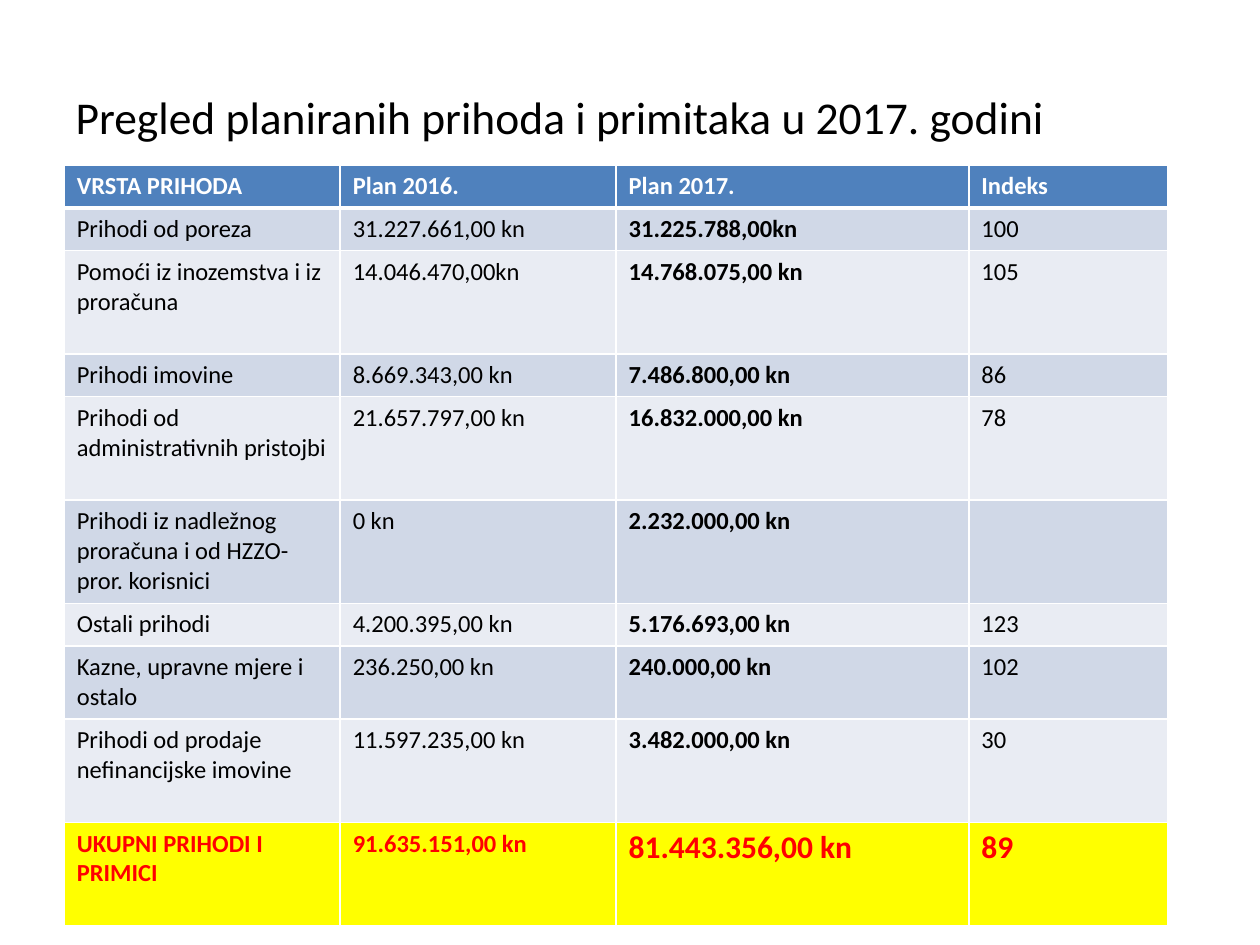
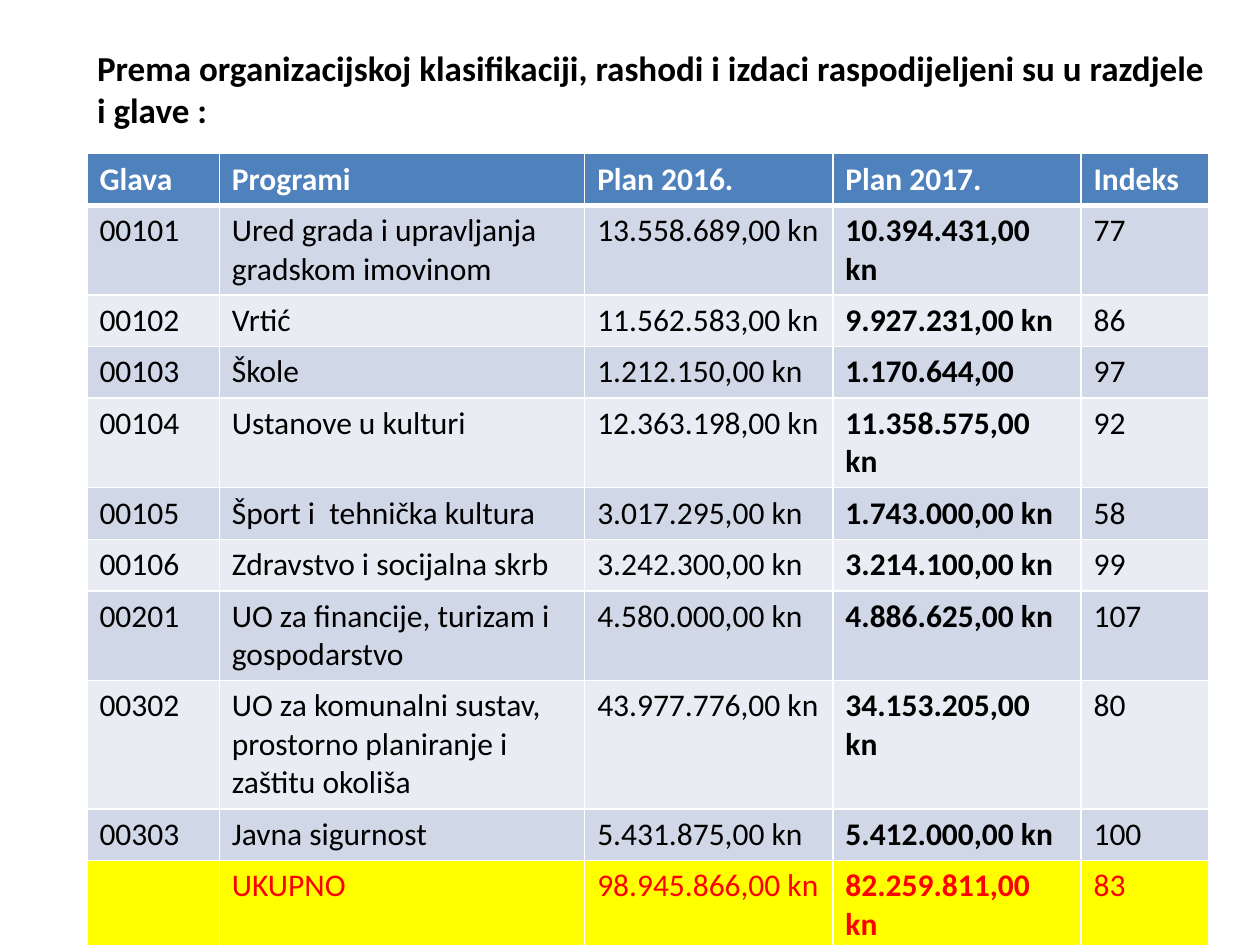
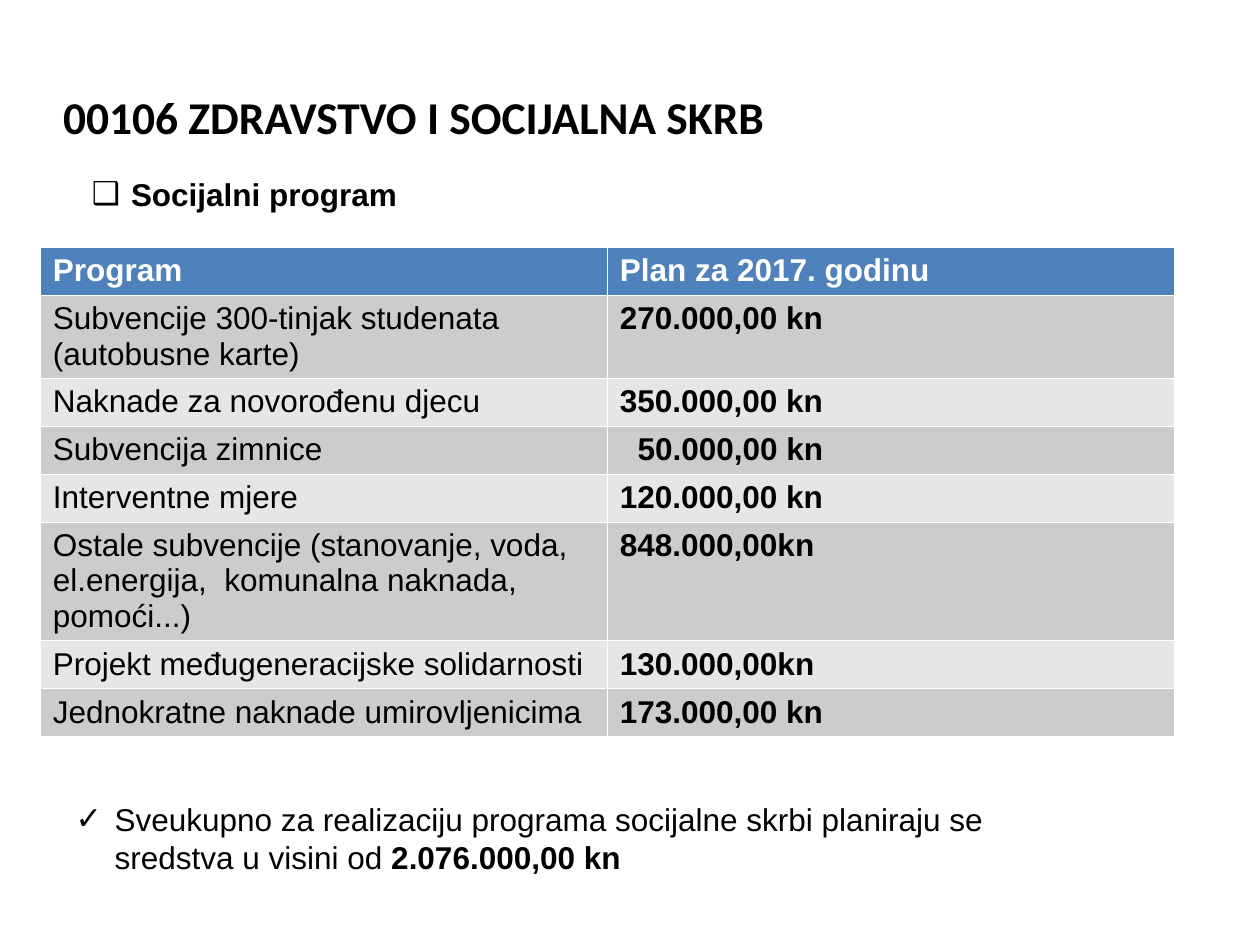
import pptx
import pptx.util
import pptx.dml.color
import pptx.enum.text
import pptx.oxml.ns
from lxml import etree

Inches = pptx.util.Inches

# Shared look
BLACK, WHITE, RED, YELLOW = "000000", "FFFFFF", "FF0000", "FFFF00"
HEADER_BLUE = "4F81BD"
BLUE_BANDS = ("D0D8E7", "E9ECF3")
GREY_BANDS = ("CCCCCC", "E6E6E6")
THIN, THICK, HAIRLINE = 0.96, 3, 0.06

# Content: one dict per slide; the plan for 2017 is the bold column
REVENUE = {
    "title": "Pregled planiranih prihoda i primitaka u 2017. godini",
    "title_box": (0.5, 0.3, 9, 1.25),
    "title_size": 26,
    "table_at": (0.51, 1.31),
    "columns": (2.19, 2.19, 2.8, 1.58),
    "heights": (0.34, 0.34, 0.82, 0.34, 0.82, 0.82, 0.34, 0.58, 0.82, 0.82),
    "size": 14,
    "bold_column": 2,
    "total_bold": True,
    "total_sizes": (14, 14, 18, 18),
    "rows": [
        ("VRSTA PRIHODA", "Plan 2016.", "Plan 2017.", "Indeks"),
        ("Prihodi od poreza", "31.227.661,00 kn", "31.225.788,00kn", "100"),
        ("Pomoći iz inozemstva i iz proračuna", "14.046.470,00kn", "14.768.075,00 kn", "105"),
        ("Prihodi imovine", "8.669.343,00 kn", "7.486.800,00 kn", "86"),
        ("Prihodi od administrativnih pristojbi", "21.657.797,00 kn", "16.832.000,00 kn", "78"),
        ("Prihodi iz nadležnog proračuna i od HZZO- pror. korisnici", "0 kn", "2.232.000,00 kn", ""),
        ("Ostali prihodi", "4.200.395,00 kn", "5.176.693,00 kn", "123"),
        ("Kazne, upravne mjere i ostalo", "236.250,00 kn", "240.000,00 kn", "102"),
        ("Prihodi od prodaje nefinancijske imovine", "11.597.235,00 kn", "3.482.000,00 kn", "30"),
        ("UKUPNI PRIHODI I PRIMICI", "91.635.151,00 kn", "81.443.356,00 kn", "89"),
    ],
}

EXPENSES = {
    "title": "Prema organizacijskoj klasifikaciji, rashodi i izdaci raspodijeljeni su u razdjele i glave :",
    "title_box": (0.67, 0.08, 9, 1.25),
    "title_size": 20,
    "title_bold": True,
    "table_at": (0.69, 1.22),
    "columns": (1.05, 2.9, 1.97, 1.97, 1.01),
    "heights": (0.41, 0.71, 0.41, 0.41, 0.71, 0.41, 0.41, 0.71, 1.02, 0.41, 0.49),
    "size": 18,
    "bold_column": 3,
    "total_sizes": (18,) * 5,
    "rows": [
        ("Glava", "Programi", "Plan 2016.", "Plan 2017.", "Indeks"),
        ("00101", "Ured grada i upravljanja gradskom imovinom", "13.558.689,00 kn", "10.394.431,00 kn", "77"),
        ("00102", "Vrtić", "11.562.583,00 kn", "9.927.231,00 kn", "86"),
        ("00103", "Škole", "1.212.150,00 kn", "1.170.644,00", "97"),
        ("00104", "Ustanove u kulturi", "12.363.198,00 kn", "11.358.575,00 kn", "92"),
        ("00105", "Šport i  tehnička kultura", "3.017.295,00 kn", "1.743.000,00 kn", "58"),
        ("00106", "Zdravstvo i socijalna skrb", "3.242.300,00 kn", "3.214.100,00 kn", "99"),
        ("00201", "UO za financije, turizam i gospodarstvo", "4.580.000,00 kn", "4.886.625,00 kn", "107"),
        ("00302", "UO za komunalni sustav, prostorno planiranje i zaštitu okoliša",
         "43.977.776,00 kn", "34.153.205,00 kn", "80"),
        ("00303", "Javna sigurnost", "5.431.875,00 kn", "5.412.000,00 kn", "100"),
        ("", "UKUPNO", "98.945.866,00 kn", "82.259.811,00 kn", "83"),
    ],
}

SOCIAL_CARE = {
    "title": "00106 ZDRAVSTVO I SOCIJALNA SKRB",
    "title_box": (0.5, 0.3, 9, 1.25),
    "title_size": 26,
    "title_bold": True,
    "title_inset": 0,
    "table_at": (0.32, 1.96),
    "columns": (4.5, 4.5),
    "heights": (0.31,) + (0.37,) * 7,
    "size": 18,
    "font": "Arial",
    "bands": GREY_BANDS,
    "border": HAIRLINE,
    "header_border": HAIRLINE,
    "bold_column": 1,
    "indents": {(3, 1): 0.14},
    "rows": [
        ("Program", "Plan za 2017. godinu"),
        ("Subvencije 300-tinjak studenata (autobusne karte)", "270.000,00 kn"),
        ("Naknade za novorođenu djecu", "350.000,00 kn"),
        ("Subvencija zimnice", "50.000,00 kn"),
        ("Interventne mjere", "120.000,00 kn"),
        ("Ostale subvencije (stanovanje, voda, el.energija,  komunalna naknada, pomoći...)", "848.000,00kn"),
        ("Projekt međugeneracijske solidarnosti", "130.000,00kn"),
        ("Jednokratne naknade umirovljenicima", "173.000,00 kn"),
    ],
    "bullets": [
        ((0.63, 1.34, 8.58, 0.75), "❑", [("Socijalni program", True)]),
        ((0.5, 6.3, 8.16, 0.66), "✓", [
            ("Sveukupno za realizaciju programa socijalne skrbi planiraju se sredstva u visini od ", False),
            ("2.076.000,00 kn", True)]),
    ],
}


def color(value):
    return pptx.dml.color.RGBColor.from_string(value)


def add_run(paragraph, text, size, font, bold=False, fill=BLACK):
    run = paragraph.add_run()
    run.text = text
    run.font.size = pptx.util.Pt(size)
    run.font.name = font
    run.font.bold = bold
    run.font.color.rgb = color(fill)


def place(shape, box, anchor):
    shape.left, shape.top, shape.width, shape.height = map(Inches, box)
    frame = shape.text_frame
    frame.word_wrap = True
    frame.auto_size = pptx.enum.text.MSO_AUTO_SIZE.NONE
    frame.vertical_anchor = anchor
    paragraph = frame.paragraphs[0]
    paragraph.alignment = pptx.enum.text.PP_ALIGN.LEFT
    paragraph.space_before = pptx.util.Pt(0)
    return paragraph


def add_title(slide, content):
    title = slide.shapes.title
    paragraph = place(title, content["title_box"], pptx.enum.text.MSO_ANCHOR.MIDDLE)
    if "title_inset" in content:
        title.text_frame.margin_left = Inches(content["title_inset"])
    add_run(paragraph, content["title"], content["title_size"], "Calibri", content.get("title_bold", False))


def add_bullet(placeholder, box, symbol, runs):
    paragraph = place(placeholder, box, pptx.enum.text.MSO_ANCHOR.TOP)
    for text, bold in runs:
        add_run(paragraph, text, 18, "Arial", bold)
    properties = paragraph._p.get_or_add_pPr()
    properties.set("marL", str(Inches(0.31)))
    properties.set("indent", str(-Inches(0.31)))
    for tag, attribute, value in (("a:buFont", "typeface", "Arial"), ("a:buChar", "char", symbol)):
        etree.SubElement(properties, pptx.oxml.ns.qn(tag)).set(attribute, value)


def set_borders(cell, **widths):
    properties = cell._tc.get_or_add_tcPr()
    for side in "LRTB":
        line = etree.SubElement(properties, pptx.oxml.ns.qn("a:ln" + side))
        line.set("w", str(pptx.util.Pt(widths[side])))
        fill = etree.SubElement(line, pptx.oxml.ns.qn("a:solidFill"))
        etree.SubElement(fill, pptx.oxml.ns.qn("a:srgbClr")).set("val", WHITE)


def add_table(slide, content):
    rows, columns, heights = content["rows"], content["columns"], content["heights"]
    left, top = content["table_at"]
    table = slide.shapes.add_table(
        len(rows), len(columns), Inches(left), Inches(top),
        Inches(sum(columns)), Inches(sum(heights))).table
    table.first_row = table.horz_banding = False
    for column, width in zip(table.columns, columns):
        column.width = Inches(width)
    for row, height in zip(table.rows, heights):
        row.height = Inches(height)

    border = content.get("border", THIN)
    header_border = content.get("header_border", THICK)
    bands = content.get("bands", BLUE_BANDS)
    for r, row in enumerate(rows):
        is_header = r == 0
        is_total = "total_sizes" in content and r == len(rows) - 1
        if is_header:
            background, text_color = HEADER_BLUE, WHITE
        elif is_total:
            background, text_color = YELLOW, RED
        else:
            background, text_color = bands[(r - 1) % 2], BLACK
        for c, text in enumerate(row):
            cell = table.cell(r, c)
            set_borders(cell, L=border, R=border,
                        T=header_border if r == 1 else border,
                        B=header_border if is_header else border)
            cell.fill.solid()
            cell.fill.fore_color.rgb = color(background)
            cell.margin_left = Inches(0.1 + content.get("indents", {}).get((r, c), 0))
            if text:
                size = content["total_sizes"][c] if is_total else content["size"]
                bold = is_header or c == content["bold_column"] or (
                    is_total and content.get("total_bold", False))
                add_run(cell.text_frame.paragraphs[0], text, size,
                        content.get("font", "Calibri"), bold, text_color)


def main():
    presentation = pptx.Presentation()
    presentation.slide_width, presentation.slide_height = Inches(10), Inches(7.5)
    title_only, two_content = presentation.slide_layouts[5], presentation.slide_layouts[3]
    for content in (REVENUE, EXPENSES, SOCIAL_CARE):
        bullets = content.get("bullets", [])
        slide = presentation.slides.add_slide(two_content if bullets else title_only)
        add_title(slide, content)
        add_table(slide, content)
        for number, bullet in enumerate(bullets, start=1):
            add_bullet(slide.placeholders[number], *bullet)
    presentation.save("out.pptx")


if __name__ == "__main__":
    main()
